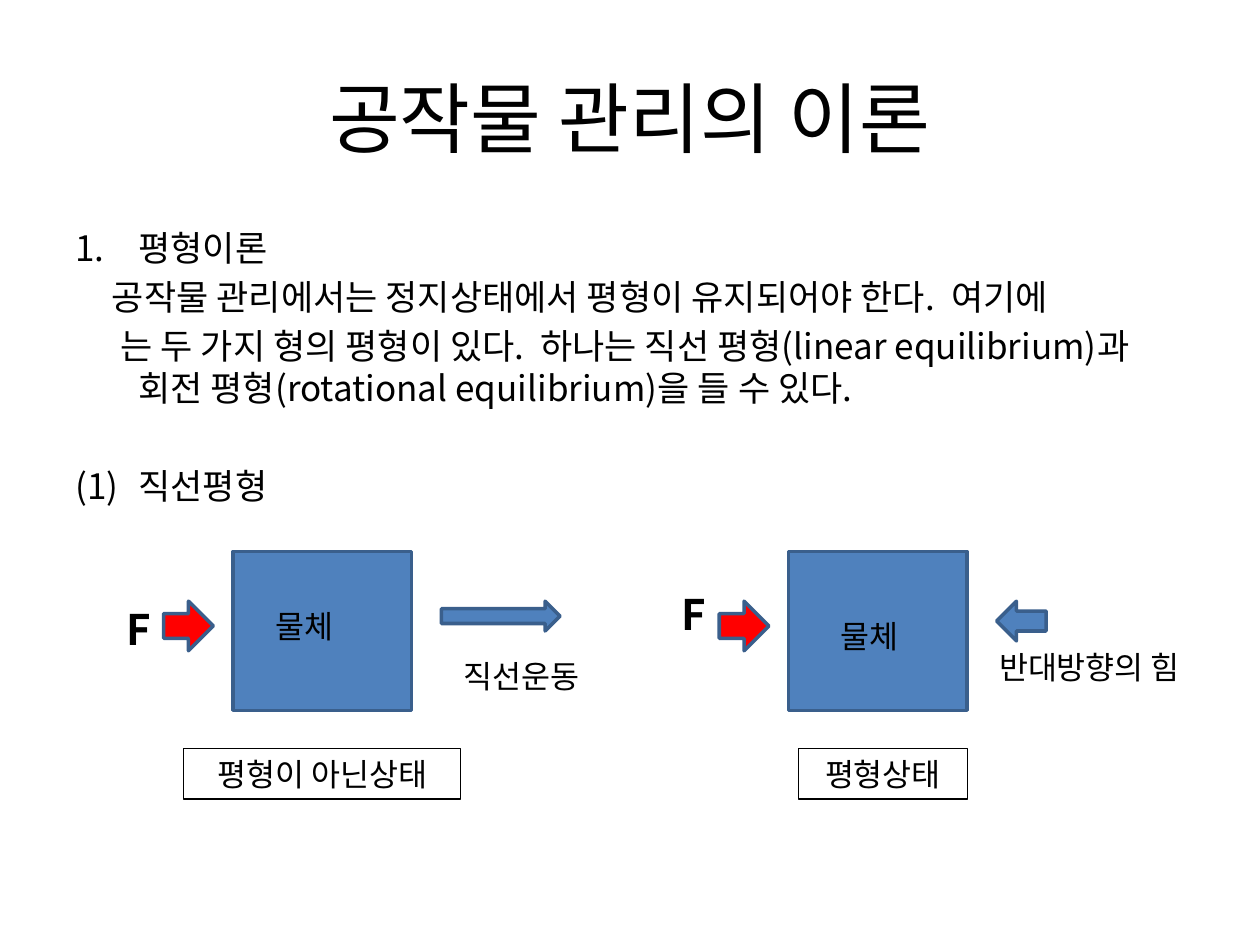
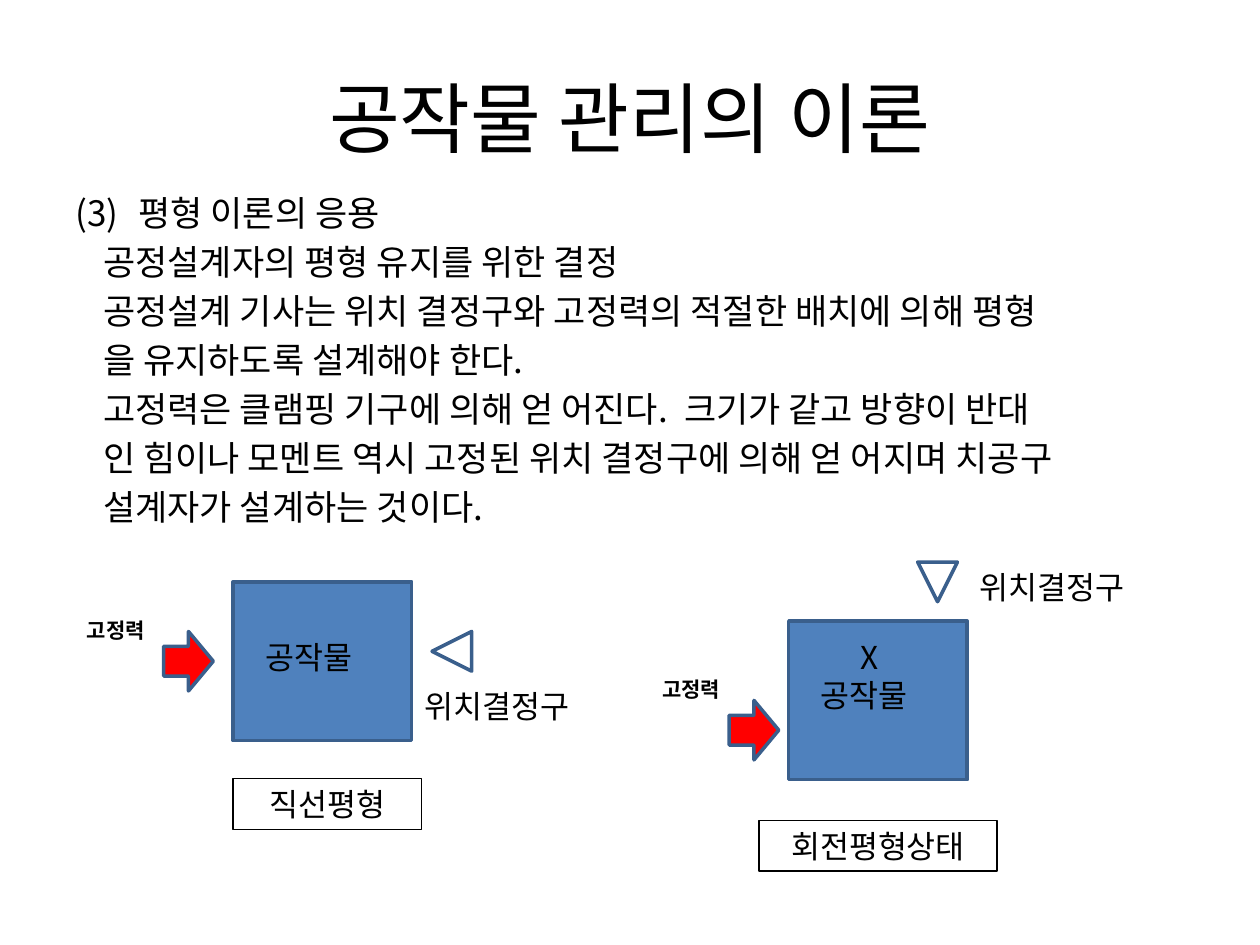
from lxml import etree
from pptx import Presentation
from pptx.dml.color import RGBColor
from pptx.enum.shapes import MSO_SHAPE
from pptx.enum.text import MSO_ANCHOR, PP_ALIGN
from pptx.oxml.ns import qn
from pptx.util import Inches, Pt

RECT = MSO_SHAPE.RECTANGLE
ARROW = MSO_SHAPE.RIGHT_ARROW
TRIANGLE = MSO_SHAPE.ISOSCELES_TRIANGLE
LEFT, CENTER = PP_ALIGN.LEFT, PP_ALIGN.CENTER
TOP, MIDDLE = MSO_ANCHOR.TOP, MSO_ANCHOR.MIDDLE

FONT = "Noto Sans CJK KR"
BLACK, BLUE, EDGE, RED = "000000", "4F81BD", "3A5F8C", "FF0000"
LINE_HEIGHT = 1.2
TITLE = "공작물 관리의 이론"

prs = Presentation()
prs.slide_width, prs.slide_height = Inches(10), Inches(7.5)
CELL = prs.slide_width / 254  # square grid, 254 columns by 190.5 rows

BLOCK_W, BLOCK_H = 36, 32
TEXT_H = 10.2
TITLE_AREA = (12.7, 7.6, 228.6, 31.8)


def add_shape(slide, kind, area, fill=None, line=EDGE, width=2, rotation=0):
    """Draw a preset shape, or a plain text box when kind is None."""
    box = [round(v * CELL) for v in area]
    if kind is None:
        return slide.shapes.add_textbox(*box)
    sp = slide.shapes.add_shape(kind, *box)
    sp.shadow.inherit = False
    sp.rotation = rotation
    if fill:
        sp.fill.solid()
        sp.fill.fore_color.rgb = RGBColor.from_string(fill)
    else:
        sp.fill.background()
    sp.line.color.rgb = RGBColor.from_string(line)
    sp.line.width = Pt(width)
    return sp


def write(sp, paragraphs, size=18, bold=False, align=LEFT, anchor=TOP):
    """Each paragraph is (text, margin, indent, space before, numbering)."""
    tf = sp.text_frame
    tf.word_wrap = True
    tf.vertical_anchor = anchor
    for i, (text, margin, indent, before, number) in enumerate(paragraphs):
        p = tf.add_paragraph() if i else tf.paragraphs[0]
        p.alignment = align
        p.line_spacing = Pt(size * LINE_HEIGHT)
        p.space_before = Pt(before)
        pPr = p._p.get_or_add_pPr()
        pPr.set("marL", str(Inches(margin)))
        pPr.set("indent", str(Inches(indent)))
        if number:
            etree.SubElement(pPr, qn("a:buFont"), typeface="+mj-lt")
            etree.SubElement(pPr, qn("a:buAutoNum"), number)
        r = p.add_run()
        r.text = text
        r.font.size, r.font.bold, r.font.name = Pt(size), bold, FONT
        r.font.color.rgb = RGBColor.from_string(BLACK)
        etree.SubElement(r._r.get_or_add_rPr(), qn("a:ea"), typeface=FONT)


HANGING = (0.5, -0.5)
NARROW = (0.22, 0, 4, None)

slides = [
    {
        "body_area": (12.7, 44.45, 228.6, 138.7),
        "body": [
            ("평형이론", *HANGING, 0, {"type": "arabicPeriod"}),
            ("공작물 관리에서는 정지상태에서 평형이 유지되어야 한다.  여기에", 0.29, 0, 4, None),
            ("는 두 가지 형의 평형이 있다.  하나는 직선 평형(linear equilibrium)과 "
             "회전 평형(rotational equilibrium)을 들 수 있다.", 0.5, -0.14, 4, None),
            ("직선평형", *HANGING, 32, {"type": "arabicParenBoth"}),
        ],
        "blocks": [(47, 111.2), (159, 111.2)],
        "forces": [(33, 121.2, 10, 10), (145, 121.2, 10, 10)],
        "force_names": [("F", 23.1, 120.4, 12), ("F", 134.9, 117.3, 12)],
        "force_size": 24,
        "markers": [(ARROW, (89, 121.2, 23.9, 6), BLUE, 0),
                    (ARROW, (200.9, 121.2, 10, 8), BLUE, 180)],
        "labels": [("직선운동", 91, 131.3, 34), ("반대방향의 힘", 198.9, 129.3, 46),
                   ("물체", 53, 121.2, 20), ("물체", 166.9, 123.2, 20)],
        "captions": [("평형이 아닌상태", 37, 150.9, 55.9), ("평형상태", 161, 150.9, 34)],
    },
    {
        "body_area": (12.7, 37.3, 228.6, 146),
        "body": [
            ("평형 이론의 응용", *HANGING, 0, {"type": "arabicParenBoth", "startAt": "3"}),
            ("공정설계자의 평형 유지를 위한 결정", *NARROW),
            ("공정설계 기사는 위치 결정구와 고정력의 적절한 배치에 의해 평형", *NARROW),
            ("을 유지하도록 설계해야 한다.", *NARROW),
            ("고정력은 클램핑 기구에 의해 얻 어진다.  크기가 같고 방향이 반대", *NARROW),
            ("인 힘이나 모멘트 역시 고정된 위치 결정구에 의해 얻 어지며 치공구", *NARROW),
            ("설계자가 설계하는 것이다.", *NARROW),
        ],
        "blocks": [(47, 117.3), (159, 125.2)],
        "forces": [(33, 127.3, 10, 12), (147, 141.2, 10, 12)],
        "force_names": [("고정력", 15, 123.2, 18), ("고정력", 131, 135.1, 20)],
        "force_size": 12,
        "markers": [(TRIANGLE, (87.1, 127.3, 8, 8), None, 270),
                    (TRIANGLE, (185, 113.3, 8, 8), None, 180)],
        "labels": [("위치결정구", 83, 137.2, 40), ("위치결정구", 195, 113.3, 38),
                   ("공작물", 51, 127.3, 28), ("공작물", 163, 135.1, 28),
                   ("X", 171, 127.3, 8)],
        "captions": [("직선평형", 47, 157, 38), ("회전평형상태", 153, 165.4, 48)],
    },
]

for content in slides:
    slide = prs.slides.add_slide(prs.slide_layouts[6])
    write(add_shape(slide, None, TITLE_AREA), [(TITLE, 0, 0, 0, None)],
          size=44, align=CENTER, anchor=MIDDLE)
    write(add_shape(slide, None, content["body_area"]), content["body"], size=20)

    for x, y in content["blocks"]:
        add_shape(slide, RECT, (x, y, BLOCK_W, BLOCK_H), BLUE)
    for area in content["forces"]:
        add_shape(slide, ARROW, area, RED)
    for kind, area, fill, rotation in content["markers"]:
        add_shape(slide, kind, area, fill, rotation=rotation)

    for text, x, y, w in content["force_names"]:
        write(add_shape(slide, None, (x, y, w, TEXT_H)), [(text, 0, 0, 0, None)],
              size=content["force_size"], bold=True)
    for text, x, y, w in content["labels"]:
        write(add_shape(slide, None, (x, y, w, TEXT_H)), [(text, 0, 0, 0, None)])
    for text, x, y, w in content["captions"]:
        sp = add_shape(slide, RECT, (x, y, w, TEXT_H), line=BLACK, width=0.75)
        write(sp, [(text, 0, 0, 0, None)], align=CENTER)

prs.save("out.pptx")
